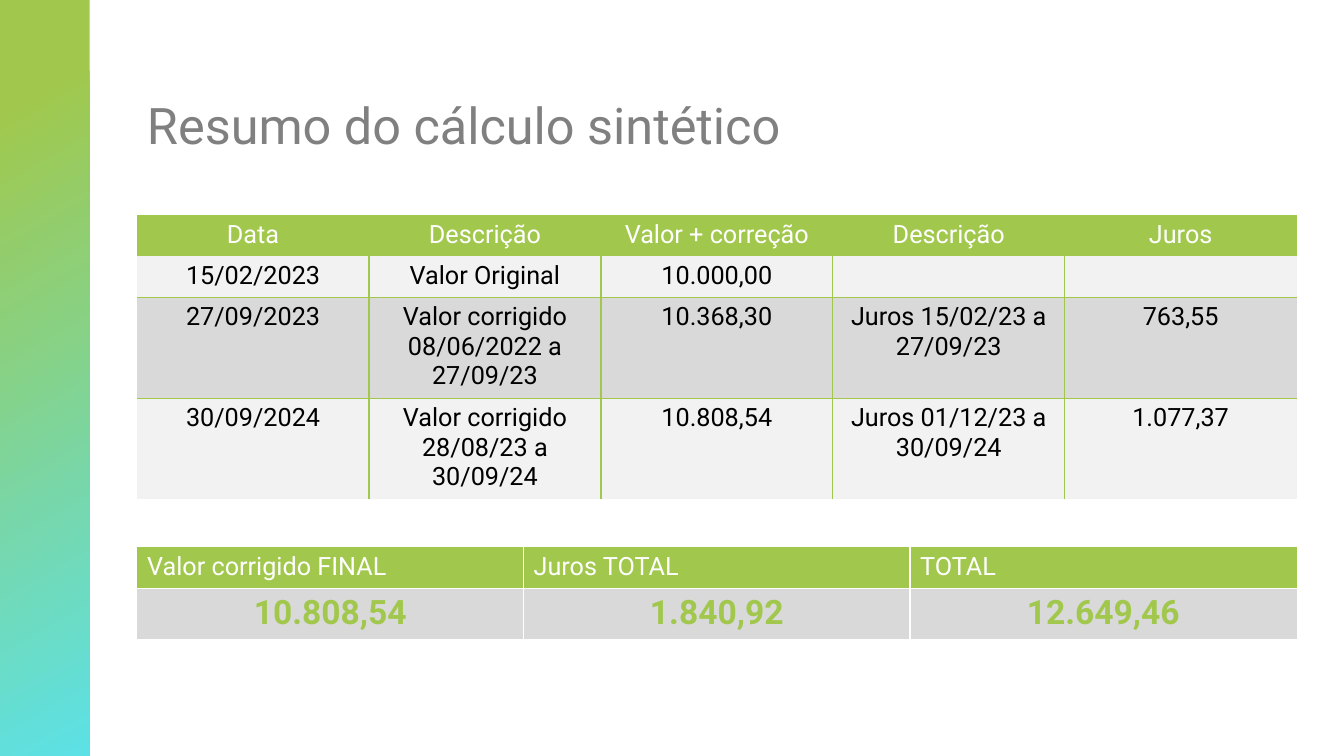
"""Build the slide that sums up the calculation in two tables."""
from lxml import etree
from pptx import Presentation
from pptx.dml.color import RGBColor
from pptx.enum.shapes import MSO_SHAPE
from pptx.enum.text import MSO_ANCHOR, PP_ALIGN
from pptx.oxml.ns import qn
from pptx.util import Inches, Pt

TITLE = "Resumo do cálculo sintético"
DETAILS = [
    ["Data", "Descrição", "Valor + correção", "Descrição", "Juros"],
    ["15/02/2023", "Valor Original", "10.000,00", "", ""],
    ["27/09/2023", "Valor corrigido 08/06/2022 a 27/09/23", "10.368,30",
     "Juros 15/02/23 a 27/09/23", "763,55"],
    ["30/09/2024", "Valor corrigido 28/08/23 a 30/09/24", "10.808,54",
     "Juros 01/12/23 a 30/09/24", "1.077,37"],
]
TOTALS = [
    ["Valor corrigido FINAL", "Juros TOTAL", "TOTAL"],
    ["10.808,54", "1.840,92", "12.649,46"],
]
DETAIL_HEIGHTS = [0.41, 0.41, 0.98, 0.98]
TOTAL_HEIGHTS = [0.41, 0.5]

FONT = "Roboto"
GREEN = RGBColor(0xA1, 0xC8, 0x4D)
CYAN = RGBColor(0x5C, 0xE1, 0xE6)
WHITE = RGBColor(0xFF, 0xFF, 0xFF)
BLACK = RGBColor(0, 0, 0)
TITLE_GRAY = RGBColor(0x80, 0x80, 0x80)
LIGHT_GRAY = RGBColor(0xF2, 0xF2, 0xF2)
MID_GRAY = RGBColor(0xD9, 0xD9, 0xD9)

LEFT, WIDTH = 1.36, 11.5
CENTER, ALIGN_LEFT = PP_ALIGN.CENTER, PP_ALIGN.LEFT
MIDDLE = MSO_ANCHOR.MIDDLE
RECTANGLE = MSO_SHAPE.RECTANGLE
PLAIN_TABLE_STYLE = "{2D5ABB26-0587-4C30-8999-92F81FD0307C}"


def write(text_frame, text, size, color, bold=False, align=ALIGN_LEFT):
    text_frame.text = text
    paragraph = text_frame.paragraphs[0]
    paragraph.alignment = align
    for item in [paragraph, *paragraph.runs]:
        item.font.name = FONT
        item.font.size = Pt(size)
        item.font.bold = bold
        item.font.color.rgb = color
    return paragraph


def add_borders(cell, sides, color):
    properties = cell._tc.get_or_add_tcPr()
    for index, side in enumerate(sides):
        line = etree.Element(qn(f"a:ln{side}"), w=str(Pt(1)))
        fill = etree.SubElement(line, qn("a:solidFill"))
        etree.SubElement(fill, qn("a:srgbClr"), val=str(color))
        properties.insert(index, line)


def add_grid(slide, top, rows, heights, fills, border, first_bordered, header_align, body):
    row_count, column_count = len(rows), len(rows[0])
    frame = slide.shapes.add_table(row_count, column_count, Inches(LEFT), Inches(top),
                                   Inches(WIDTH), Inches(sum(heights)))
    table = frame.table
    table._tbl.tblPr.find(qn("a:tableStyleId")).text = PLAIN_TABLE_STYLE
    for column in table.columns:
        column.width = Inches(WIDTH / column_count)
    for row, texts in enumerate(rows):
        table.rows[row].height = Inches(heights[row])
        for column, text in enumerate(texts):
            cell = table.cell(row, column)
            if row == 0:
                write(cell.text_frame, text, 18, WHITE, align=header_align)
            else:
                write(cell.text_frame, text, *body, align=CENTER)
            cell.fill.solid()
            cell.fill.fore_color.rgb = fills[row]
            inner_sides = {
                "L": column > 0,
                "R": column < column_count - 1,
                "T": row > first_bordered,
                "B": row < row_count - 1,
            }
            if row >= first_bordered:
                add_borders(cell, [side for side, shown in inner_sides.items() if shown], border)


def main():
    presentation = Presentation()
    presentation.slide_width = Inches(13.33)
    presentation.slide_height = Inches(7.5)
    slide = presentation.slides.add_slide(presentation.slide_layouts[6])

    side_band = slide.shapes.add_shape(RECTANGLE, 0, 0, Inches(0.89), Inches(7.5))
    side_band.shadow.inherit = False
    side_band.line.fill.background()
    side_band.fill.gradient()
    side_band.fill.gradient_angle = 300
    for stop, position, color in zip(side_band.fill.gradient_stops, (0.14, 1), (GREEN, CYAN)):
        stop.position = position
        stop.color.rgb = color

    title = slide.shapes.add_textbox(Inches(LEFT), Inches(0.91), Inches(WIDTH), Inches(0.73))
    title.text_frame.word_wrap = True
    title.text_frame.vertical_anchor = MIDDLE
    write(title.text_frame, TITLE, 36, TITLE_GRAY).line_spacing = 0.9

    add_grid(slide, 2.13, DETAILS, DETAIL_HEIGHTS, [GREEN, LIGHT_GRAY, MID_GRAY, LIGHT_GRAY],
             GREEN, 1, CENTER, (18, BLACK))
    add_grid(slide, 5.43, TOTALS, TOTAL_HEIGHTS, [GREEN, MID_GRAY],
             WHITE, 0, ALIGN_LEFT, (24, GREEN, True))

    presentation.save("out.pptx")


if __name__ == "__main__":
    main()
